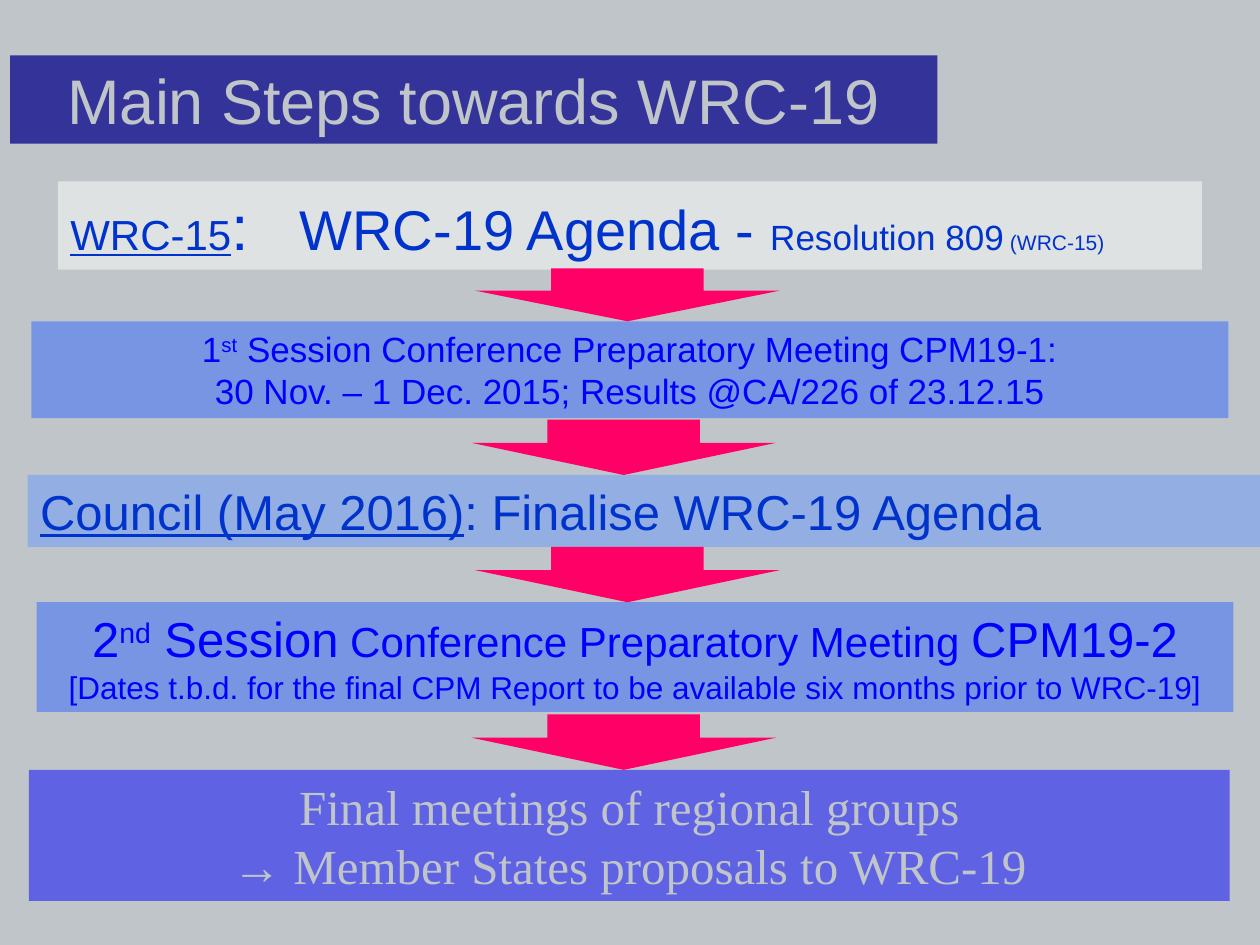
from lxml import etree
from pptx import Presentation
from pptx.dml.color import RGBColor
from pptx.enum.shapes import MSO_SHAPE as SHAPE
from pptx.enum.text import MSO_ANCHOR as ANCHOR, PP_ALIGN as ALIGN
from pptx.oxml.ns import qn
from pptx.util import Inches, Pt

COLORS = {
    "background": "BFC5C8", "title": "333399", "agenda": "FFFFFF",
    "session": "3366FF", "council": "6699FF", "proposals": "0000FF",
    "arrow": "FF0066", "step text": "0033CC", "session text": "0000FF",
}


def add_block(kind, box, color, opacity=100):
    """Add a borderless filled shape; opacity is in percent."""
    block = slide.shapes.add_shape(kind, *[Inches(length) for length in box])
    block.shadow.inherit = False
    block.line.fill.background()
    block.fill.solid()
    block.fill.fore_color.rgb = RGBColor.from_string(COLORS[color])
    if opacity < 100:
        fill_color = block.fill._xPr.find(qn("a:solidFill"))[0]
        etree.SubElement(fill_color, qn("a:alpha"), val=str(opacity * 1000))
    return block


def write_lines(paragraph, lines, font_name, color):
    """Fill a paragraph with lines of (text, format values) runs."""
    for number, line in enumerate(lines):
        if number:
            paragraph.add_line_break()
        for text, size, *extras in line:
            run = paragraph.add_run()
            run.text = text
            formats = {"name": font_name, "size": Pt(size),
                       "underline": "underline" in extras}
            for attribute, value in formats.items():
                setattr(run.font, attribute, value)
            run.font.color.rgb = RGBColor.from_string(COLORS[color])
            if "superscript" in extras:
                run._r.get_or_add_rPr().set("baseline", "30000")


prs = Presentation()
prs.slide_width, prs.slide_height = Inches(10), Inches(7.5)
slide = prs.slides.add_slide(prs.slide_layouts[6])
slide.background.fill.solid()
slide.background.fill.fore_color.rgb = RGBColor.from_string(COLORS["background"])

# box, fill, opacity, alignment, font, text colour, paragraphs of lines of runs
steps = [
    ((0.08, 0.44, 7.36, 0.7), "title", 100, ALIGN.CENTER, "Arial", "background",
     [[[("Main Steps towards WRC-19", 36)]]]),
    ((0.46, 1.44, 9.08, 0.7), "agenda", 50, ALIGN.LEFT, "Arial", "step text",
     [[[("WRC-15", 24, "underline"), (":\t", 36), ("WRC-19 Agenda - ", 32),
        ("Resolution 809", 20), (" (WRC-15)", 12)]]]),
    ((0.25, 2.55, 9.5, 0.77), "session", 50, ALIGN.CENTER, "Arial", "session text",
     [[[("1", 20), ("st", 20, "superscript"),
        (" Session Conference Preparatory Meeting CPM19-1:", 20)],
       [("30 Nov. – 1 Dec. 2015; Results @CA/226 of 23.12.15", 20)]]]),
    ((0.22, 3.77, 9.78, 0.57), "council", 50, ALIGN.LEFT, "Arial", "step text",
     [[[("Council (May 2016)", 28, "underline"),
        (": Finalise WRC-19 Agenda", 28)]]]),
    ((0.29, 4.78, 9.5, 0.87), "session", 50, ALIGN.CENTER, "Arial", "session text",
     [[[("2", 28), ("nd", 28, "superscript"), (" Session", 28),
        (" Conference Preparatory Meeting ", 24), ("CPM19-2", 28)],
       [("[Dates t.b.d. for the final CPM Report to be available "
         "six months prior to WRC-19]", 18)]]]),
    ((0.23, 6.11, 9.53, 1.04), "proposals", 50, ALIGN.CENTER, "Times New Roman",
     "background",
     [[[("Final meetings of regional groups", 28)]],
      [[("→ Member States proposals to WRC-19", 28)]]]),
]

for box, fill, opacity, alignment, font_name, color, paragraphs in steps:
    frame = add_block(SHAPE.RECTANGLE, box, fill, opacity).text_frame
    frame.word_wrap = True
    frame.vertical_anchor = ANCHOR.MIDDLE
    for number, lines in enumerate(paragraphs):
        paragraph = frame.add_paragraph() if number else frame.paragraphs[0]
        paragraph.alignment = alignment
        if fill == "agenda":
            tabs = etree.SubElement(paragraph._p.get_or_add_pPr(), qn("a:tabLst"))
            etree.SubElement(tabs, qn("a:tab"), pos=str(Inches(1.82)), algn="l")
        write_lines(paragraph, lines, font_name, color)

for left, top, height in [(3.77, 2.13, 0.42), (3.74, 3.33, 0.44),
                          (3.77, 4.34, 0.44), (3.74, 5.67, 0.44)]:
    arrow = add_block(SHAPE.DOWN_ARROW, (left, top, 2.42, height), "arrow")
    arrow.adjustments[0] = 0.5
    arrow.adjustments[1] = 0.58

prs.save("out.pptx")
